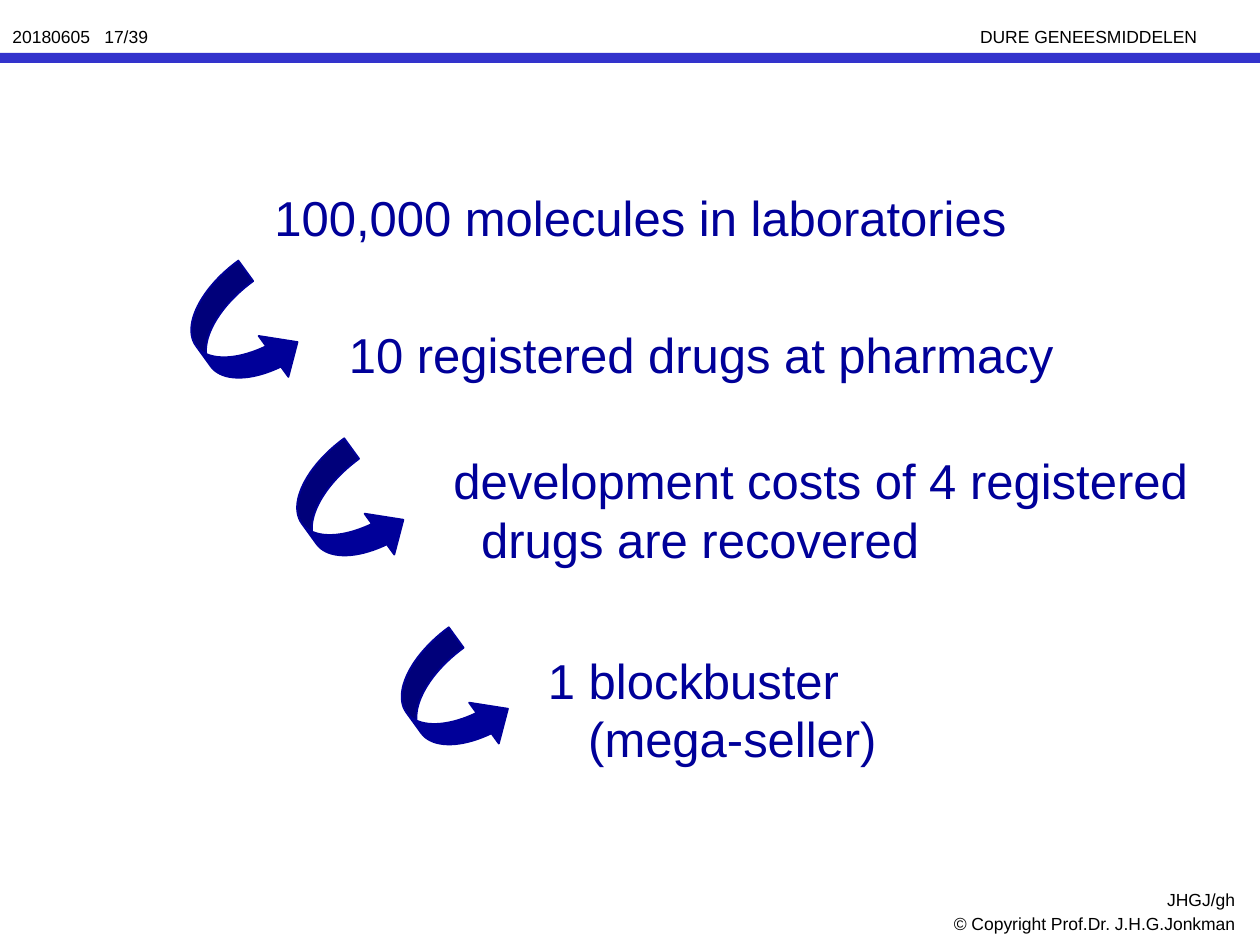
import pptx
import pptx.dml.color
import pptx.enum.shapes
import pptx.enum.text
import pptx.oxml
import pptx.oxml.ns
import pptx.util

Inches = pptx.util.Inches
Pt = pptx.util.Pt
ALIGN = pptx.enum.text.PP_ALIGN
SHAPE = pptx.enum.shapes.MSO_SHAPE

BLACK = pptx.dml.color.RGBColor(0x00, 0x00, 0x00)
NAVY = pptx.dml.color.RGBColor(0x00, 0x00, 0x99)
BAR_BLUE = pptx.dml.color.RGBColor(0x33, 0x33, 0xCC)

FONT = "Arial"
SMALL, LARGE = 10, 28


def add_text(page, at, lines, size, color, align=ALIGN.LEFT, indent=0, tab=None):
    """Add one paragraph per line; lines after the first are indented."""
    box = page.shapes.add_textbox(*map(Inches, at))
    frame = box.text_frame
    frame.word_wrap = False
    for number, line in enumerate(lines):
        para = frame.add_paragraph() if number else frame.paragraphs[0]
        para.alignment = align
        properties = para._p.get_or_add_pPr()
        if number and indent:
            properties.set("marL", str(Inches(indent)))
        if tab:
            properties.append(pptx.oxml.parse_xml(
                f'<a:tabLst {pptx.oxml.ns.nsdecls("a")}>'
                f'<a:tab pos="{Inches(tab)}" algn="l"/></a:tabLst>'))
        span = para.add_run()
        span.text = line
        span.font.name = FONT
        span.font.size = Pt(size)
        span.font.color.rgb = color


def add_solid(page, kind, at, color):
    shape = page.shapes.add_shape(kind, *map(Inches, at))
    shape.shadow.inherit = False
    shape.fill.solid()
    shape.fill.fore_color.rgb = color
    shape.line.fill.background()
    return shape


def add_step_arrow(page, left, top):
    arrow = add_solid(page, SHAPE.CURVED_RIGHT_ARROW, (left, top, 0.67, 1), NAVY)
    arrow.line.color.rgb = NAVY
    arrow.line.width = Pt(1)
    arrow.rotation = 324
    for index, value in enumerate((0.3, 0.6, 0.33)):
        arrow.adjustments[index] = value


def main():
    deck = pptx.Presentation()
    deck.slide_width, deck.slide_height = Inches(10), Inches(7.5)
    page = deck.slides.add_slide(deck.slide_layouts[6])

    # Header
    add_text(page, (0, 0.16, 1.39, 0.27), ["20180605\t17/39"], SMALL, BLACK, tab=0.73)
    add_text(page, (7.68, 0.16, 1.95, 0.27), ["DURE GENEESMIDDELEN"], SMALL, BLACK)
    add_solid(page, SHAPE.RECTANGLE, (0, 0.42, 10, 0.08), BAR_BLUE)

    # Footer
    add_text(page, (8.82, 7.01, 1.08, 0.31), ["JHGJ/gh"], SMALL, BLACK, ALIGN.RIGHT)
    add_text(page, (7.28, 7.2, 2.62, 0.27), ["© Copyright Prof.Dr. J.H.G.Jonkman"],
             SMALL, BLACK, ALIGN.RIGHT)

    # Steps from molecule to blockbuster
    steps = [
        ((2.08, 1.44, 6.03, 0.57), ["100,000 molecules in laboratories"], 0),
        ((2.67, 2.53, 5.81, 0.57), ["10 registered drugs at pharmacy"], 0),
        ((3.5, 3.53, 6.05, 1.03),
         ["development costs of 4 registered", "drugs are recovered"], 0.22),
        ((4.25, 5.11, 2.82, 1.03), ["1 blockbuster", "(mega-seller)"], 0.32),
    ]
    for at, lines, indent in steps:
        add_text(page, at, lines, LARGE, NAVY, indent=indent)

    # Arrows between the steps
    for left, top in ((1.58, 2.17), (2.42, 3.58), (3.25, 5.08)):
        add_step_arrow(page, left, top)

    deck.save("out.pptx")


if __name__ == "__main__":
    main()
